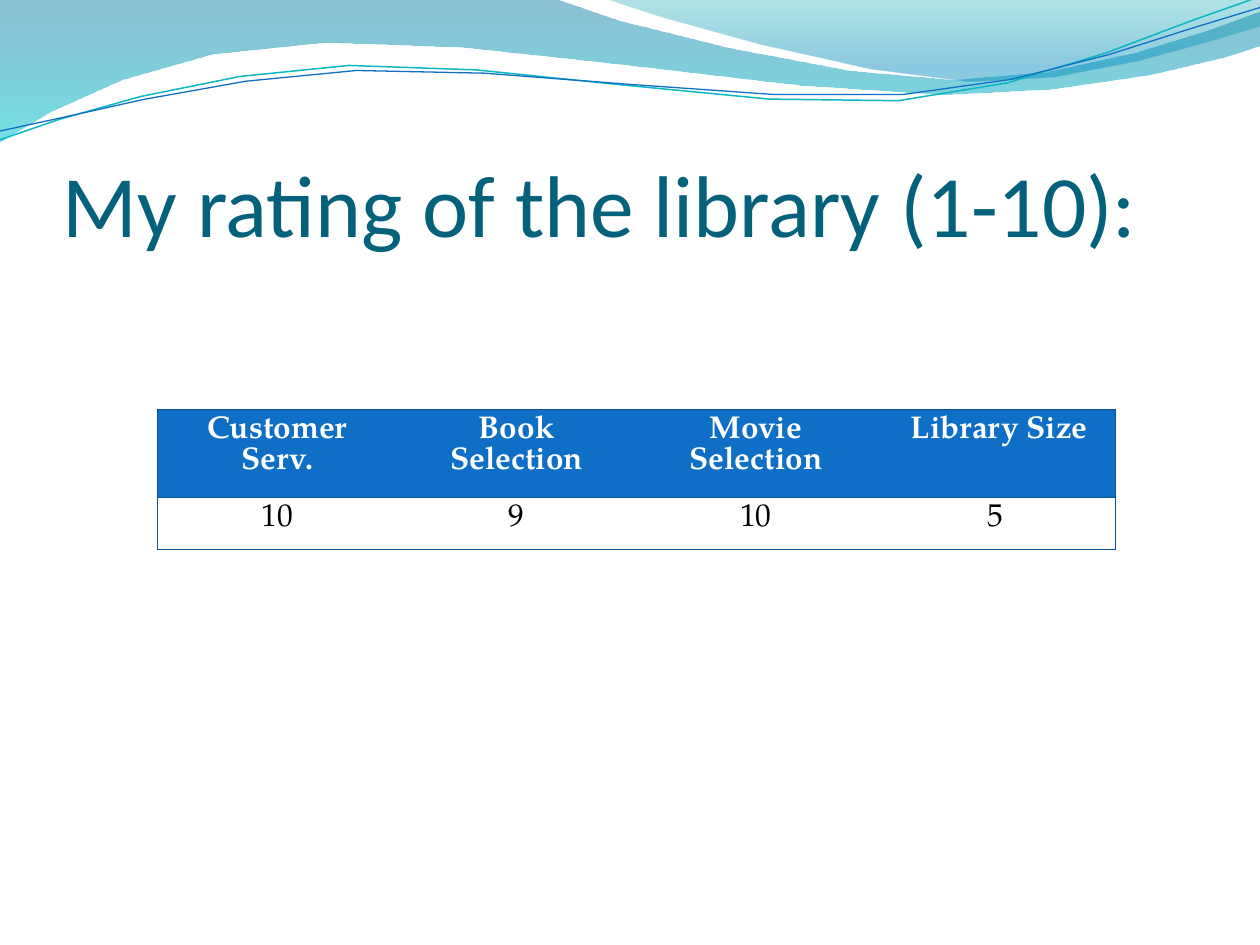
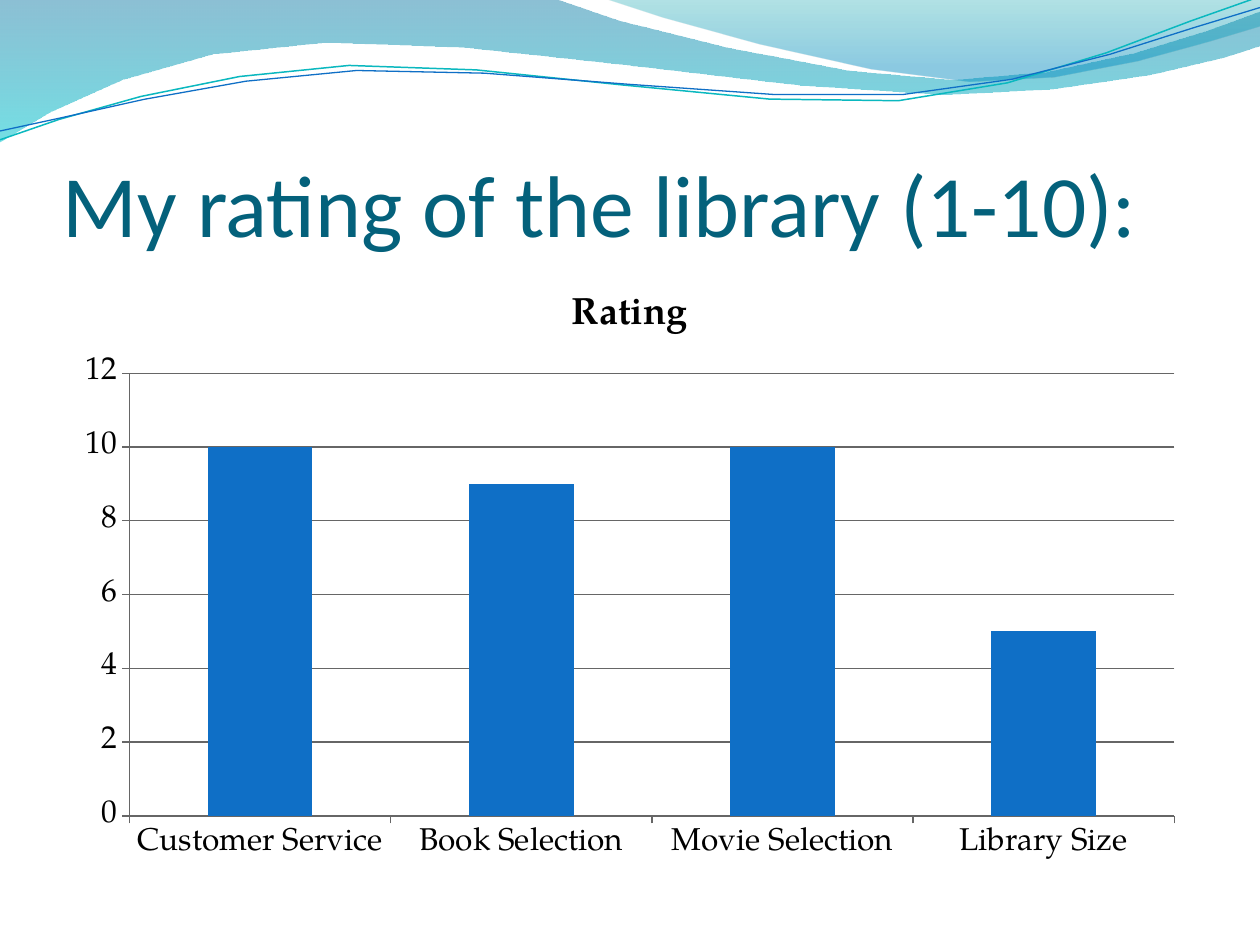
"""Build two slides that rate a library, as a table and as a column chart."""
import dataclasses

import lxml.etree
import pptx
import pptx.chart.data
import pptx.dml.color
import pptx.enum.chart
import pptx.enum.text
import pptx.oxml.ns
import pptx.util

Inches = pptx.util.Inches
Pt = pptx.util.Pt


@dataclasses.dataclass(frozen=True)
class Theme:
    title_font: str = "Calibri"
    body_font: str = "TeX Gyre Pagella"
    title_size: float = 50
    chart_title_size: float = 21.6
    body_size: float = 18
    hairline: float = 0.75
    title: str = "04617B"
    accent: str = "0F6FC6"
    teal: str = "0AB8BF"
    border: str = "095295"
    grid: str = "666666"
    text: str = "000000"
    background: str = "FFFFFF"
    wide_gradient: tuple = ((0, "0074A1", 45), (1, "00C6CF", 55))
    corner_gradient: tuple = ((0, "00A1A9", 30), (0.8, "008BBF", 45))


WIDE_WAVE = [
    (0, 0), [(4.4, -0.01)],
    [(4.76, 0.17), (6.64, 0.63), (7.58, 0.63)],
    [(8.53, 0.63), (9.58, 0.26), (10, 0.09)],
    [(10.01, 0.36)],
    [(9.83, 0.44), (8.7, 0.76), (7.46, 0.75)],
    [(6.22, 0.75), (3.82, 0.28), (2.57, 0.34)],
    [(1.29, 0.36), (0.46, 0.83), (-0.01, 1.13)],
]
CORNER_WAVE = [
    (4.79, -0.01),
    [(5.09, 0.11), (6.82, 0.62), (7.69, 0.65)],
    [(8.56, 0.69), (9.61, 0.32), (10, 0.21)],
    [(10, 0)],
]
TEAL_LINE = [
    (0, 1.11),
    [(0.48, 0.93), (1.58, 0.57), (2.77, 0.52)],
    [(3.95, 0.47), (5.93, 0.89), (7.13, 0.8)],
    [(8.33, 0.71), (9.38, 0.15), (9.98, -0.02)],
]
BLUE_LINE = [
    (0, 1.04),
    [(0.47, 0.96), (1.64, 0.61), (2.83, 0.56)],
    [(4.03, 0.51), (5.97, 0.84), (7.17, 0.75)],
    [(8.36, 0.67), (9.41, 0.21), (10, 0.06)],
]
TITLE = "My rating of the library (1-10):"
HEADINGS = ["Customer Serv.", "Book Selection", "Movie Selection", " Library Size"]
CATEGORIES = ["Customer Service", "Book Selection", "Movie Selection", "Library Size"]
RATINGS = [10, 9, 10, 5]


def rgb(color):
    return pptx.dml.color.RGBColor.from_string(color)


def apply_format(target, values):
    for name, value in values.items():
        setattr(target, name, value)


def trace(outline, steps=4):
    points = [outline[0]]
    for segment in outline[1:]:
        if len(segment) == 1:
            points += segment
            continue
        curve = [points[-1], *segment]
        for step in range(1, steps + 1):
            t = step / steps
            weights = ((1 - t) ** 3, 3 * t * (1 - t) ** 2, 3 * t * t * (1 - t), t ** 3)
            points.append(tuple(
                sum(weight * point[axis] for weight, point in zip(weights, curve))
                for axis in (0, 1)))
    return [(Inches(x), Inches(y)) for x, y in points]


class Deck:
    def __init__(self, theme):
        self.theme = theme
        self.presentation = pptx.Presentation()
        apply_format(self.presentation,
                     {"slide_width": Inches(10), "slide_height": Inches(7.5)})
        self.slide = None

    def new_slide(self, title):
        self.slide = self.presentation.slides.add_slide(
            self.presentation.slide_layouts[6])
        fill = self.slide.background.fill
        fill.solid()
        fill.fore_color.rgb = rgb(self.theme.background)
        self.wave(WIDE_WAVE, self.theme.wide_gradient)
        self.wave(CORNER_WAVE, self.theme.corner_gradient)
        self.curve(TEAL_LINE, self.theme.teal, 0.85)
        self.curve(BLUE_LINE, self.theme.accent, self.theme.hairline)
        self.title(title)

    def set_font(self, font, color=None, **values):
        apply_format(font, {"name": self.theme.body_font,
                            "size": Pt(self.theme.body_size), "bold": False, **values})
        font.color.rgb = rgb(color or self.theme.text)

    def outline(self, outline, close):
        start, *points = trace(outline)
        builder = self.slide.shapes.build_freeform(*start)
        builder.add_line_segments(points, close=close)
        shape = builder.convert_to_shape()
        shape.shadow.inherit = False
        return shape

    def wave(self, outline, gradient):
        shape = self.outline(outline, True)
        shape.line.fill.background()
        shape.fill.gradient()
        shape.fill.gradient_angle = 270
        for stop, (position, color, _) in zip(shape.fill.gradient_stops, gradient):
            stop.position = position
            stop.color.rgb = rgb(color)
        colors = shape.element.spPr.iter(pptx.oxml.ns.qn("a:srgbClr"))
        for color, (_, _, opacity) in zip(colors, gradient):
            alpha = lxml.etree.SubElement(color, pptx.oxml.ns.qn("a:alpha"))
            alpha.set("val", str(opacity * 1000))

    def curve(self, outline, color, width):
        shape = self.outline(outline, False)
        shape.fill.background()
        shape.line.color.rgb = rgb(color)
        shape.line.width = Pt(width)

    def title(self, text):
        box = self.slide.shapes.add_textbox(
            Inches(0.5), Inches(0.77), Inches(9), Inches(1.25))
        apply_format(box.text_frame, {
            "word_wrap": True, "vertical_anchor": pptx.enum.text.MSO_ANCHOR.BOTTOM,
            "margin_left": 0, "margin_top": Inches(0.05),
            "margin_right": 0, "margin_bottom": 0})
        run = box.text_frame.paragraphs[0].add_run()
        run.text = text
        self.set_font(run.font, self.theme.title, name=self.theme.title_font,
                      size=Pt(self.theme.title_size))

    def cell_borders(self, cell, visible):
        properties = cell._tc.get_or_add_tcPr()
        for side in "LRTB":
            line = lxml.etree.SubElement(properties, pptx.oxml.ns.qn(f"a:ln{side}"))
            if side not in visible:
                lxml.etree.SubElement(line, pptx.oxml.ns.qn("a:noFill"))
                continue
            line.set("w", str(Pt(self.theme.hairline)))
            fill = lxml.etree.SubElement(line, pptx.oxml.ns.qn("a:solidFill"))
            color = lxml.etree.SubElement(fill, pptx.oxml.ns.qn("a:srgbClr"))
            color.set("val", self.theme.border)

    def table(self, rows, left, top, column_width, row_height, height):
        last = len(rows[0]) - 1
        frame = self.slide.shapes.add_table(
            len(rows), len(rows[0]), Inches(left), Inches(top),
            Inches(column_width * len(rows[0])), Inches(height))
        table = frame.table
        for row in table.rows:
            row.height = Inches(row_height)
        frame.height = Inches(height)
        for row_index, values in enumerate(rows):
            header = row_index == 0
            for column, value in enumerate(values):
                cell = table.cell(row_index, column)
                self.cell_borders(cell, "TB" + "L" * (column == 0) + "R" * (column == last))
                if header:
                    cell.fill.solid()
                    cell.fill.fore_color.rgb = rgb(self.theme.accent)
                else:
                    cell.fill.background()
                paragraph = cell.text_frame.paragraphs[0]
                paragraph.alignment = pptx.enum.text.PP_ALIGN.CENTER
                run = paragraph.add_run()
                run.text = str(value)
                self.set_font(run.font, self.theme.background if header else None,
                              bold=header)

    def column_chart(self, name, categories, values, left, top, width, height):
        data = pptx.chart.data.CategoryChartData()
        data.categories = categories
        data.add_series(name, values)
        chart = self.slide.shapes.add_chart(
            pptx.enum.chart.XL_CHART_TYPE.COLUMN_CLUSTERED, Inches(left), Inches(top),
            Inches(width), Inches(height), data).chart
        apply_format(chart, {"has_legend": False, "has_title": True})
        self.set_font(chart.font)
        chart.chart_title.include_in_layout = False
        run = chart.chart_title.text_frame.paragraphs[0].add_run()
        run.text = name
        self.set_font(run.font, bold=True, size=Pt(self.theme.chart_title_size))
        plot = chart.plots[0]
        apply_format(plot, {"vary_by_categories": False, "gap_width": 150})
        fill = plot.series[0].format.fill
        fill.solid()
        fill.fore_color.rgb = rgb(self.theme.accent)
        apply_format(chart.value_axis, {
            "minimum_scale": 0, "maximum_scale": 12, "major_unit": 2,
            "has_major_gridlines": True})
        for axis in (chart.category_axis, chart.value_axis):
            apply_format(axis, {
                "major_tick_mark": pptx.enum.chart.XL_TICK_MARK.OUTSIDE,
                "minor_tick_mark": pptx.enum.chart.XL_TICK_MARK.NONE})
        for part in (chart.category_axis, chart.value_axis,
                     chart.value_axis.major_gridlines):
            part.format.line.color.rgb = rgb(self.theme.grid)
            part.format.line.width = Pt(self.theme.hairline)


def main():
    deck = Deck(Theme())
    deck.new_slide(TITLE)
    deck.table([HEADINGS, RATINGS], 1.25, 3.25, 1.9, 0.41, 1.11)
    deck.new_slide(TITLE)
    deck.column_chart("Rating", CATEGORIES, RATINGS, 0.5, 2.12, 9, 4.8)
    deck.presentation.save("out.pptx")


if __name__ == "__main__":
    main()
